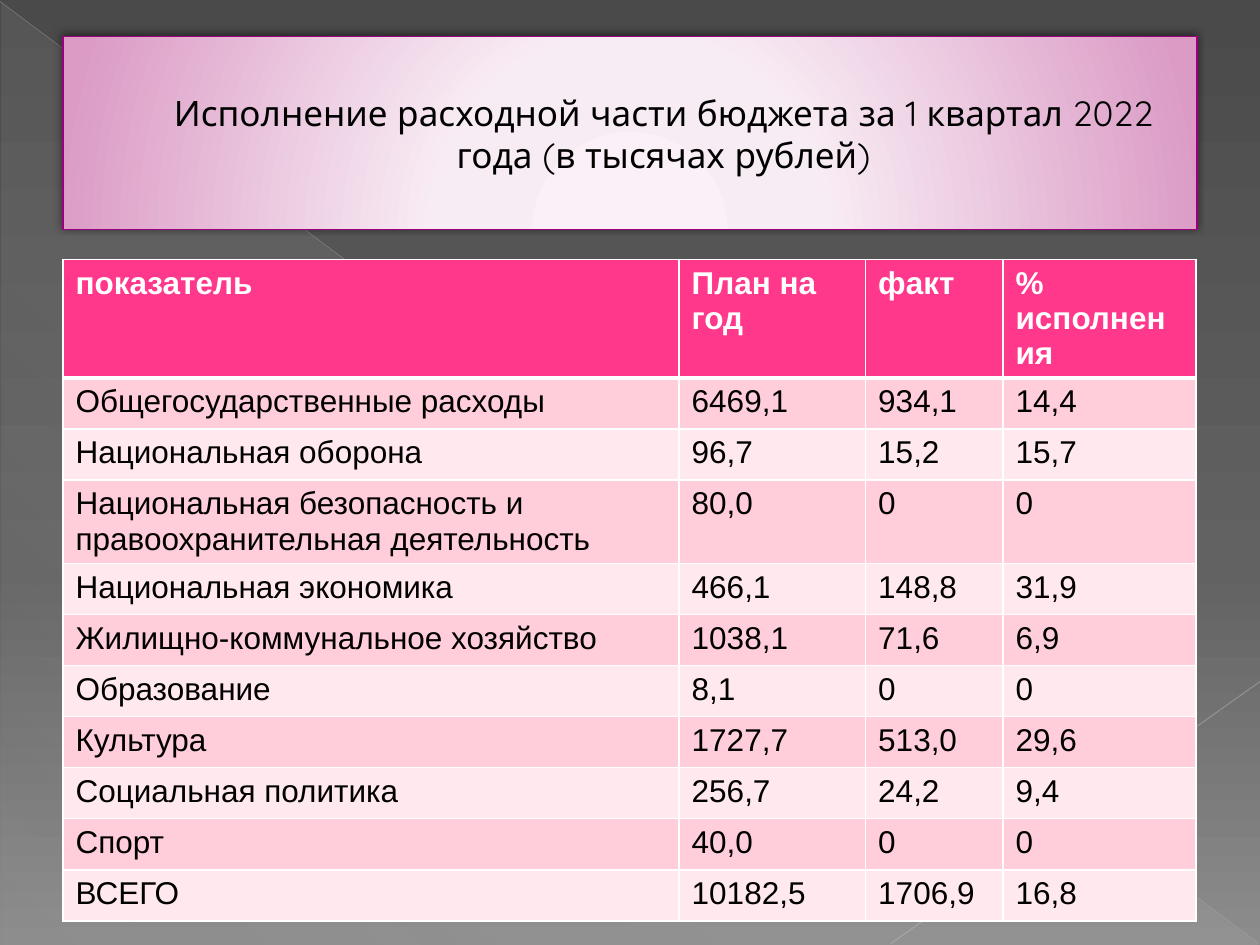
from lxml.etree import SubElement
from pptx import Presentation
from pptx.dml.color import RGBColor
from pptx.enum.shapes import MSO_CONNECTOR, MSO_SHAPE
from pptx.enum.text import MSO_ANCHOR, PP_ALIGN
from pptx.oxml import parse_xml
from pptx.oxml.ns import nsdecls, qn
from pptx.util import Cm, Pt

TITLE = "Исполнение расходной части бюджета за 1 квартал 2022 года (в тысячах рублей)"
ROWS = [
    ("показатель", "План на год", "факт", "% исполнения"),
    ("Общегосударственные расходы", "6469,1", "934,1", "14,4"),
    ("Национальная оборона", "96,7", "15,2", "15,7"),
    ("Национальная безопасность и правоохранительная деятельность", "80,0", "0", "0"),
    ("Национальная экономика", "466,1", "148,8", "31,9"),
    ("Жилищно-коммунальное хозяйство", "1038,1", "71,6", "6,9"),
    ("Образование", "8,1", "0", "0"),
    ("Культура", "1727,7", "513,0", "29,6"),
    ("Социальная политика", "256,7", "24,2", "9,4"),
    ("Спорт", "40,0", "0", "0"),
    ("ВСЕГО", "10182,5", "1706,9", "16,8"),
]
COL_WIDTHS = [12.42, 3.76, 2.77, 3.89]
ROW_HEIGHT = 1.03
LEFT, WIDTH = 1.27, 22.86

BLACK = RGBColor(0x00, 0x00, 0x00)
WHITE = RGBColor(0xFF, 0xFF, 0xFF)
PINK = RGBColor(0xFF, 0x38, 0x8C)
BANDS = [RGBColor(0xFF, 0xE8, 0xEE), RGBColor(0xFF, 0xCE, 0xDA)]
PURPLE = RGBColor(0x9C, 0x00, 0x7F)
OUTLINE = RGBColor(0xB1, 0x27, 0x61)
GREY = RGBColor(0xD2, 0xD2, 0xD2)

BACKGROUND_STOPS = [(0, RGBColor(0x4A, 0x4A, 0x4A), 100),
                    (60, RGBColor(0x62, 0x62, 0x62), 100),
                    (100, RGBColor(0x8C, 0x8C, 0x8C), 100)]
TRIANGLE_STOPS = [(0, GREY, 10), (70, GREY, 8), (100, GREY, 1)]
TITLE_STOPS = [(0, RGBColor(0xFB, 0xF0, 0xF7), 100),
               (34, RGBColor(0xF8, 0xEC, 0xF4), 100),
               (100, RGBColor(0xDB, 0x9B, 0xC5), 100)]
DIAGONALS = [
    ((0, 0.03), (25.37, 19.02), RGBColor(0xBF, 0xBF, 0xBF), 0.39, 35),
    ((25.4, 13.74), (17.96, 19.02), RGBColor(0xC6, 0xC6, 0xC6), 0.47, 45),
]
LINEAR = '<a:lin ang="{}" scaled="0"/>'
RADIAL = '<a:path path="circle"><a:fillToRect l="50000" t="155000" r="50000" b="-55000"/></a:path>'


def set_gradient(props, stops, direction):
    gs = "".join(
        f'<a:gs pos="{pos * 1000}"><a:srgbClr val="{color}">'
        f'<a:alpha val="{opacity * 1000}"/></a:srgbClr></a:gs>'
        for pos, color, opacity in stops)
    props.replace(props.find(qn("a:solidFill")), parse_xml(
        f'<a:gradFill {nsdecls("a")} rotWithShape="1"><a:gsLst>{gs}</a:gsLst>{direction}</a:gradFill>'))


def line_xml(tag, color, width):
    return parse_xml(f'<a:{tag} {nsdecls("a")} w="{Pt(width)}"><a:solidFill>'
                     f'<a:srgbClr val="{color}"/></a:solidFill></a:{tag}>')


def add_backdrop(s):
    s.background.fill.solid()
    set_gradient(s.element.find(".//" + qn("p:bgPr")), BACKGROUND_STOPS, LINEAR.format(90 * 60000))
    sp = s.shapes.add_shape(MSO_SHAPE.RIGHT_TRIANGLE, Cm(0.03), Cm(0.05), Cm(25.35), Cm(19))
    sp.shadow.inherit = False
    sp.line.fill.background()
    sp.fill.solid()
    set_gradient(sp.element.spPr, TRIANGLE_STOPS, LINEAR.format(133 * 60000))
    for start, end, color, width, opacity in DIAGONALS:
        line = s.shapes.add_connector(MSO_CONNECTOR.STRAIGHT, *map(Cm, start + end))
        line.line.color.rgb = color
        line.line.width = Pt(width)
        clr = line.element.spPr.find(".//" + qn("a:srgbClr"))
        SubElement(clr, qn("a:alpha")).set("val", str(opacity * 1000))
        SubElement(line.element.spPr, qn("a:effectLst"))


def add_title(s):
    sp = s.shapes.title
    sp.element.getparent().append(sp.element)
    sp.left, sp.top, sp.width, sp.height = Cm(LEFT), Cm(0.74), Cm(WIDTH), Cm(3.89)
    sp.fill.solid()
    set_gradient(sp.element.spPr, TITLE_STOPS, RADIAL)
    sp.line.color.rgb = PURPLE
    sp.line.width = Pt(0.75)
    sp.element.spPr.append(parse_xml(
        f'<a:effectLst {nsdecls("a")}><a:outerShdw blurRad="{Pt(5)}" dist="{Pt(2)}" '
        f'dir="{245 * 60000}" rotWithShape="0"><a:srgbClr val="{BLACK}">'
        '<a:alpha val="50000"/></a:srgbClr></a:outerShdw></a:effectLst>'))
    tf = sp.text_frame
    tf.text = TITLE
    tf.word_wrap = True
    tf.vertical_anchor = MSO_ANCHOR.MIDDLE
    p = tf.paragraphs[0]
    p.alignment = PP_ALIGN.CENTER
    pPr = p._p.get_or_add_pPr()
    pPr.set("marL", str(Cm(1.35)))
    pPr.set("indent", "0")
    r = p.runs[0]
    r.font.name, r.font.size, r.font.color.rgb = "Quicksand", Pt(20), BLACK
    r.font._element.insert(0, line_xml("ln", OUTLINE, 0.5))


def format_cell(cell, text, row):
    header = row == 0
    cell.text = text
    font = cell.text_frame.paragraphs[0].runs[0].font
    font.name, font.size, font.bold = "Arial", Pt(18), header
    font.color.rgb = WHITE if header else BLACK
    tcPr = cell._tc.get_or_add_tcPr()
    for side in "LRTB":
        thick = (header and side == "B") or (row == 1 and side == "T")
        tcPr.append(line_xml(f"ln{side}", WHITE, 3 if thick else 1))
    cell.fill.solid()
    cell.fill.fore_color.rgb = PINK if header else BANDS[row % 2]


def add_budget_table(s):
    table = s.shapes.add_table(len(ROWS), len(COL_WIDTHS), Cm(LEFT), Cm(5.23),
                               Cm(WIDTH), Cm(ROW_HEIGHT * len(ROWS))).table
    for column, width in zip(table.columns, COL_WIDTHS):
        column.width = Cm(width)
    for i, values in enumerate(ROWS):
        table.rows[i].height = Cm(ROW_HEIGHT)
        for j, text in enumerate(values):
            format_cell(table.cell(i, j), text, i)


def main():
    prs = Presentation()
    prs.slide_width, prs.slide_height = Cm(25.4), Cm(19.05)
    s = prs.slides.add_slide(prs.slide_layouts[5])
    add_backdrop(s)
    add_title(s)
    add_budget_table(s)
    prs.save("out.pptx")


if __name__ == "__main__":
    main()
